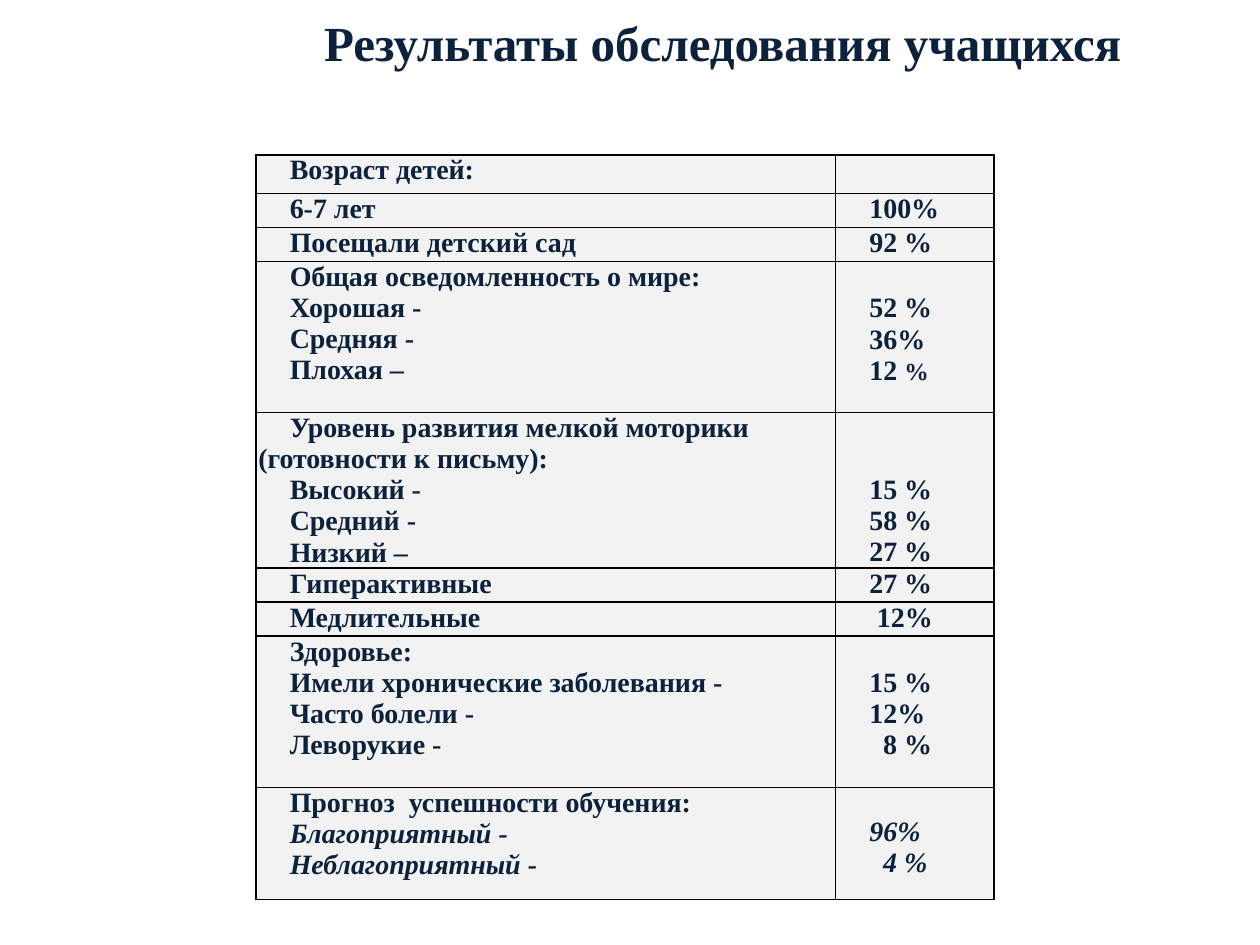
"""Build a slide with a table of pupil survey results."""
from dataclasses import dataclass

import pptx
import pptx.dml.color
import pptx.enum.text
import pptx.oxml
import pptx.oxml.ns
import pptx.table
import pptx.text.text
import pptx.util
from pptx.util import Inches

INK = pptx.dml.color.RGBColor(0x0C, 0x22, 0x3C)
CELL_FILL = pptx.dml.color.RGBColor(0xF2, 0xF2, 0xF2)
BORDER = pptx.dml.color.RGBColor(0, 0, 0)
FONT = "Times New Roman"
TEXT_SIZE = 16
INDENT = 0.25
LEFT = pptx.enum.text.PP_ALIGN.LEFT
JUSTIFY = pptx.enum.text.PP_ALIGN.JUSTIFY


@dataclass(frozen=True)
class Span:
    text: str
    size: float = TEXT_SIZE
    italic: bool = False


@dataclass(frozen=True)
class Line:
    spans: tuple[Span, ...]
    align: pptx.enum.text.PP_ALIGN = JUSTIFY
    indent: float = INDENT


@dataclass(frozen=True)
class Row:
    height: float
    labels: tuple[Line, ...]
    values: tuple[Line, ...] = ()
    value_top: float = 0


def plain(text: str, indent: float = INDENT) -> Line:
    return Line((Span(text),), indent=indent)


def heading(text: str) -> Line:
    return Line((Span(text),), align=LEFT)


def italic(text: str, indent: float = INDENT) -> Line:
    return Line((Span(text, italic=True),), indent=indent)


ROWS = (
    Row(0.3, (heading("Возраст детей:"),)),
    Row(0.27, (plain("6-7 лет"),), (plain("100%"),)),
    Row(0.27, (plain("Посещали детский сад"),), (plain("92 %"),)),
    Row(
        1.2,
        (heading("Общая осведомленность о мире:"), plain("Хорошая -"),
         plain("Средняя -"), plain("Плохая –")),
        (plain("52 %"), plain("36%"),
         Line((Span("12 "), Span("%", size=14)), align=LEFT)),
        value_top=0.25,
    ),
    Row(
        1.23,
        (heading("Уровень развития мелкой моторики (готовности к письму):"),
         plain("Высокий -"), plain("Средний -"), plain("Низкий –")),
        (plain("15 %"), plain("58 %"), plain("27 %")),
        value_top=0.49,
    ),
    Row(0.27, (plain("Гиперактивные"),), (plain("27 %"),)),
    Row(0.27, (plain("Медлительные"),), (plain("12%", indent=0.31),)),
    Row(
        1.2,
        (plain("Здоровье:"), heading("Имели хронические заболевания -"),
         plain("Часто болели -"), plain("Леворукие -")),
        (plain("15 %"), plain("12%"), plain("8 %", indent=0.36)),
        value_top=0.25,
    ),
    Row(
        0.89,
        (heading("Прогноз  успешности обучения:"), italic("Благоприятный -"),
         italic("Неблагоприятный -")),
        (italic("96%"), italic("4 %", indent=0.36)),
        value_top=0.23,
    ),
)


def add_span(para: pptx.text.text._Paragraph, span: Span) -> None:
    run = para.add_run()
    run.text = span.text
    run.font.name = FONT
    run.font.size = pptx.util.Pt(span.size)
    run.font.bold = True
    run.font.italic = span.italic
    run.font.color.rgb = INK


def add_borders(cell: pptx.table._Cell) -> None:
    properties = cell._tc.get_or_add_tcPr()
    for side in ("lnL", "lnR", "lnT", "lnB"):
        properties.append(pptx.oxml.parse_xml(
            f'<a:{side} {pptx.oxml.ns.nsdecls("a")} w="{pptx.util.Pt(1)}">'
            f'<a:solidFill><a:srgbClr val="{BORDER}"/></a:solidFill></a:{side}>'
        ))


def fill_cell(cell: pptx.table._Cell, lines: tuple[Line, ...], top: float = 0) -> None:
    add_borders(cell)
    cell.fill.solid()
    cell.fill.fore_color.rgb = CELL_FILL
    cell.margin_left = cell.margin_right = Inches(0.02)
    cell.margin_top, cell.margin_bottom = Inches(top), 0
    for index, line in enumerate(lines):
        frame = cell.text_frame
        para = frame.add_paragraph() if index else frame.paragraphs[0]
        para.alignment = line.align
        properties = para._p.get_or_add_pPr()
        properties.set("marL", "0")
        properties.set("indent", str(Inches(line.indent)))
        for span in line.spans:
            add_span(para, span)


def add_title(page: pptx.slide.Slide, text: str) -> None:
    title = page.shapes.title
    title.left, title.top = Inches(0.5), Inches(0.14)
    title.width, title.height = Inches(9.19), Inches(0.39)
    frame = title.text_frame
    frame.word_wrap = True
    frame.auto_size = pptx.enum.text.MSO_AUTO_SIZE.NONE
    frame.vertical_anchor = pptx.enum.text.MSO_ANCHOR.MIDDLE
    frame.margin_left = Inches(1.28)
    frame.margin_right = frame.margin_top = frame.margin_bottom = 0
    para = frame.paragraphs[0]
    para.alignment = pptx.enum.text.PP_ALIGN.CENTER
    add_span(para, Span(text, size=28))


def add_results(page: pptx.slide.Slide, rows: tuple[Row, ...]) -> None:
    height = sum(row.height for row in rows)
    table = page.shapes.add_table(
        len(rows), 2, Inches(2.03), Inches(1.23), Inches(5.86), Inches(height)
    ).table
    table.first_row = table.horz_banding = False
    for column, width in zip(table.columns, (4.6, 1.26)):
        column.width = Inches(width)
    for index, row in enumerate(rows):
        table.rows[index].height = Inches(row.height)
        fill_cell(table.cell(index, 0), row.labels)
        fill_cell(table.cell(index, 1), row.values, row.value_top)


def main() -> None:
    deck = pptx.Presentation()
    deck.slide_width, deck.slide_height = Inches(10), Inches(7.5)
    page = deck.slides.add_slide(deck.slide_layouts.get_by_name("Title Only"))
    add_title(page, "Результаты обследования учащихся")
    add_results(page, ROWS)
    deck.save("out.pptx")


if __name__ == "__main__":
    main()
